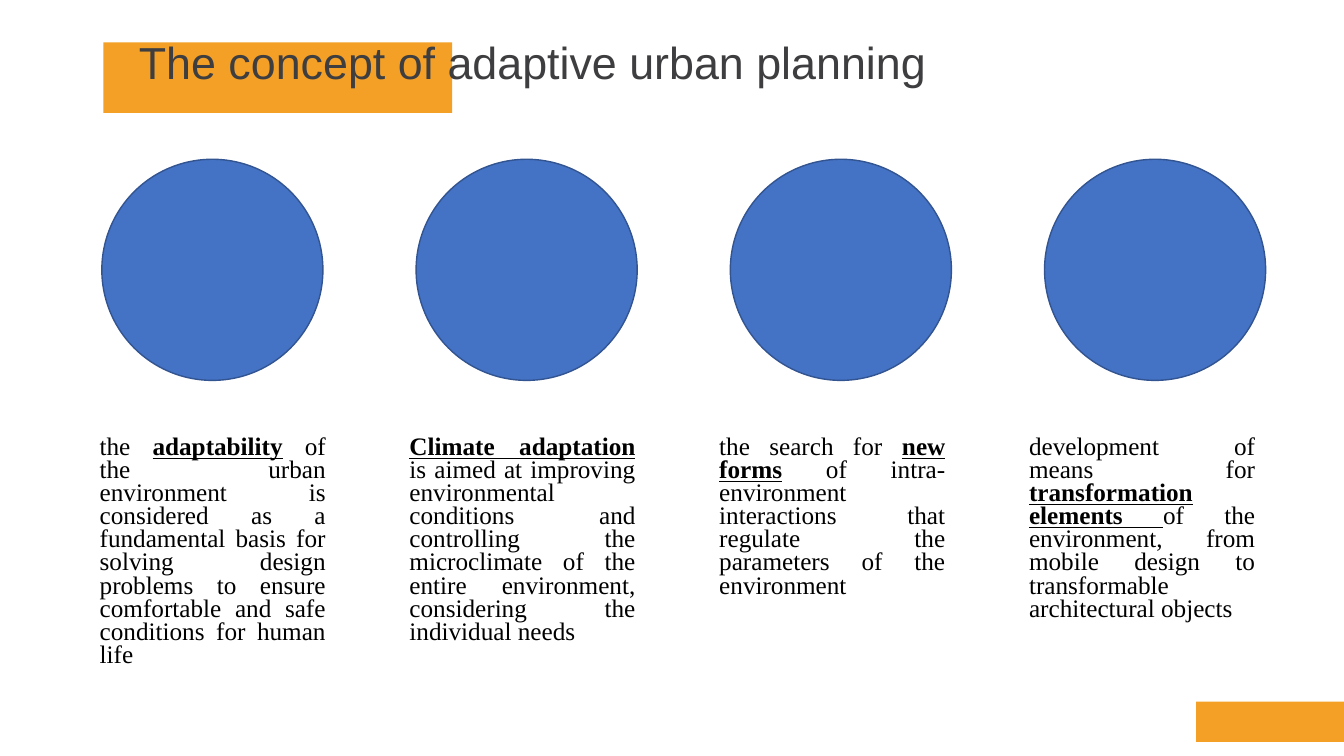
from pptx import Presentation
from pptx import util as u
from pptx.dml.color import RGBColor
from pptx.enum import shapes, text

COLORS = {"accent": "F4A027", "circle": "4472C4", "outline": "325491",
          "title": "3E3E40", "body": "000000"}

# Plain lead-in, emphasised words, plain remainder, number of lines
CONCEPTS = [
    ("the ", "adaptability",
     " of the urban environment is considered as a fundamental basis for solving "
     "design problems to ensure comfortable and safe conditions for human life", 10),
    ("", "Climate adaptation ",
     "is aimed at improving environmental conditions and controlling the microclimate "
     "of the entire environment, considering the individual needs", 9),
    ("the search for ", "new forms",
     " of intra-environment interactions that regulate the parameters of the environment", 7),
    ("development of means for ", "transformation elements ",
     "of the environment, from mobile design to transformable architectural objects", 8),
]


class Deck:
    """Style and current slide; boxes are left, top, width, height in percent of the slide."""

    def __init__(self):
        self.prs = Presentation()
        self.prs.slide_width, self.prs.slide_height = u.Inches(13.33), u.Inches(7.5)
        self.s = self.prs.slides.add_slide(self.prs.slide_layouts[6])

    def place(self, box):
        sides = (self.prs.slide_width, self.prs.slide_height) * 2
        return [round(side * share / 100) for side, share in zip(sides, box)]

    def color(self, name):
        return RGBColor.from_string(COLORS[name])

    def shape(self, kind, box, fill, line=None):
        sp = self.s.shapes.add_shape(kind, *self.place(box))
        sp.shadow.inherit = False
        sp.fill.solid()
        sp.fill.fore_color.rgb = self.color(fill)
        if line:
            sp.line.color.rgb = self.color(line)
            sp.line.width = u.Pt(1)
        else:
            sp.line.fill.background()

    def text(self, box, runs, font, size, color, spacing):
        """Add one paragraph from (words, emphasised) pairs and return it."""
        tf = self.s.shapes.add_textbox(*self.place(box)).text_frame
        tf.word_wrap = True
        p = tf.paragraphs[0]
        p.line_spacing = spacing
        p.font.name, p.font.size = font, u.Pt(size)
        p.font.color.rgb = self.color(color)
        for words, emphasised in runs:
            r = p.add_run()
            r.text = words
            if emphasised:
                r.font.bold = r.font.underline = True
        return p

    def title(self, box, words):
        self.text(box, [(words, False)], "Arial", 32, "title", 0.9)

    def body(self, box, runs):
        p = self.text(box, runs, "Times New Roman", 18, "body", u.Pt(16.5))
        p.alignment = text.PP_ALIGN.JUSTIFY
        p.space_after = u.Pt(15)


def main():
    deck = Deck()
    rect, oval = shapes.MSO_SHAPE.RECTANGLE, shapes.MSO_SHAPE.OVAL
    deck.shape(rect, (89, 92.8, 11, 5.33), "accent")
    deck.shape(rect, (7.7, 5.6, 25.95, 9.33), "accent")
    for i in range(len(CONCEPTS)):
        deck.shape(oval, (7.58 + 23.38 * i, 21.07, 16.45, 29.25), "circle", "outline")
    for i, (lead, key, rest, lines) in enumerate(CONCEPTS):
        runs = [(words, words == key) for words in (lead, key, rest) if words]
        deck.body((6.68 + 23.05 * i, 57.2, 18.3, 1.2 + 3.2 * lines), runs)
    deck.title((9.6, 4.67, 87.7, 9.2), "The concept of adaptive urban planning")
    deck.prs.save("out.pptx")


if __name__ == "__main__":
    main()
